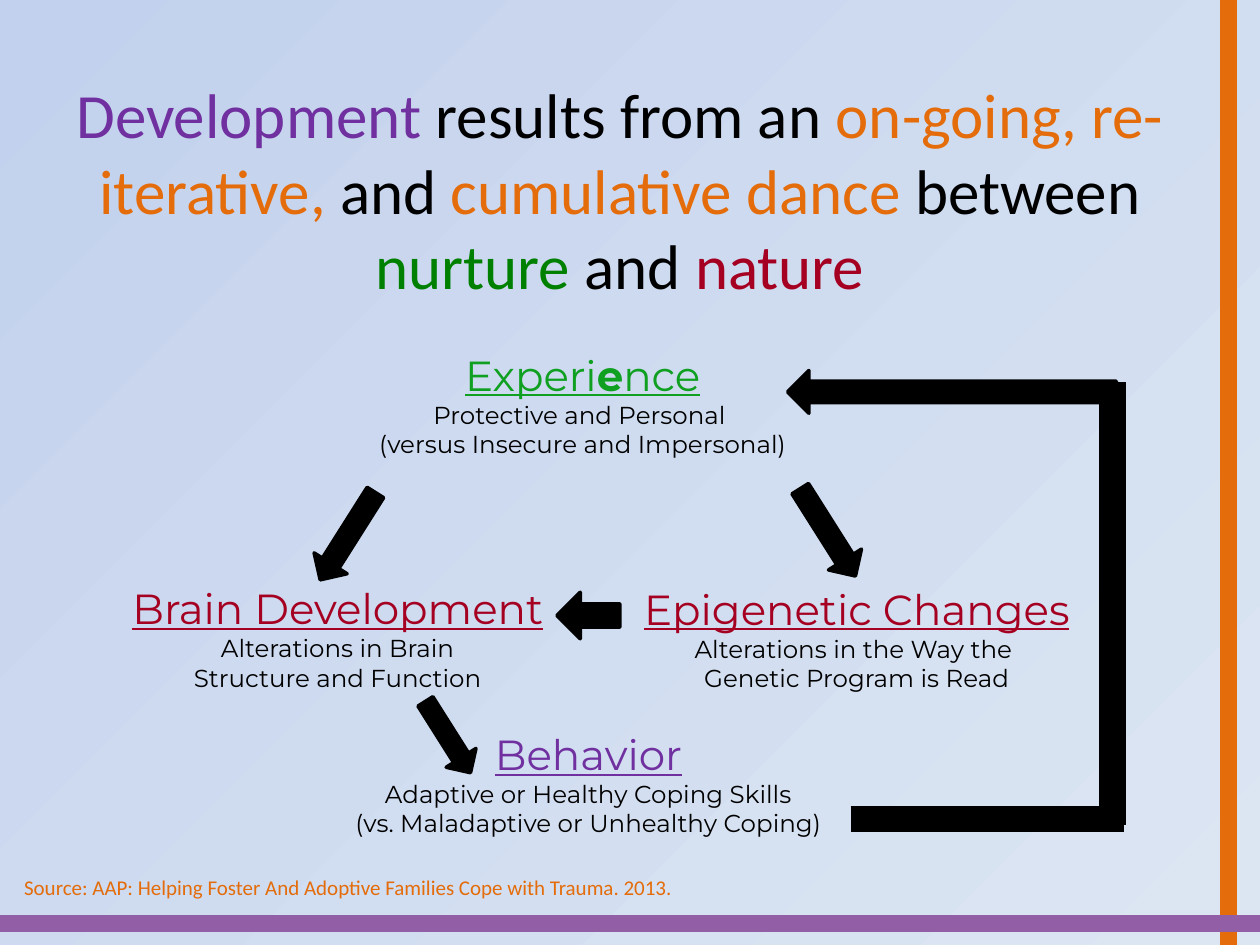
from lxml import etree
from pptx import Presentation
from pptx.dml.color import RGBColor
from pptx.enum import shapes, text
from pptx.oxml.ns import qn
from pptx.util import Inches, Pt

BLACK = RGBColor(0x00, 0x00, 0x00)
PURPLE = RGBColor(0x70, 0x30, 0xA0)
ORANGE = RGBColor(0xE4, 0x6C, 0x0A)
GREEN = RGBColor(0x00, 0x80, 0x00)
BRIGHT_GREEN = RGBColor(0x10, 0xA0, 0x21)
RED = RGBColor(0xA5, 0x00, 0x21)
VIOLET = RGBColor(0x92, 0x5F, 0xA7)
SKY = RGBColor(0xC2, 0xD1, 0xED)
PALE = RGBColor(0xDC, 0xE6, 0xF2)

MIDDLE, TOP = text.MSO_ANCHOR.MIDDLE, text.MSO_ANCHOR.TOP

TITLE = [
    ("Development ", PURPLE), ("results from an ", BLACK),
    ("on-going, re-iterative, ", ORANGE), ("and", BLACK),
    (" cumulative dance ", ORANGE), ("between ", BLACK),
    ("nurture ", GREEN), ("and ", BLACK), ("nature", RED),
]

# Place, anchor, heading colour, heading pieces (every second one bold), details
STAGES = [
    ((0.84, 4.58, 3.68, 0.96), MIDDLE, RED, ["Brain Development"],
     ["Alterations in Brain", "Structure and Function"]),
    ((2.68, 2.67, 3.89, 1.07), MIDDLE, BRIGHT_GREEN, ["Experi", "e", "nce"],
     ["Protective and Personal ", "(versus Insecure and Impersonal)"]),
    ((4.63, 4.58, 4.34, 0.96), TOP, RED, ["Epigenetic Changes"],
     ["Alterations in the Way the ", "Genetic Program is Read"]),
    ((2.3, 5.68, 4.74, 1.07), MIDDLE, PURPLE, ["Behavior"],
     ["Adaptive or Healthy Coping Skills",
      "(vs. Maladaptive or Unhealthy Coping)"]),
]

# Place and clockwise rotation
ARROWS = [
    ((6.16, 4.07, 0.82, 0.31), 57.7),   # experience to epigenetics
    ((2.35, 4.1, 0.82, 0.31), 122.3),   # experience to brain
    ((4.42, 4.7, 0.5, 0.37), 180),      # epigenetics to brain
    ((6.25, 2.94, 2.61, 0.34), 180),    # feedback to experience
    ((3.22, 5.71, 0.67, 0.28), 57.7),   # brain to behavior
]

# Start, end, colour, width
FEEDBACK_LINES = [
    ((6.75, 6.5), (8.92, 6.5), BLACK, 15),
    ((8.83, 6.55), (8.83, 3.03), BLACK, 15),
]
BORDER_LINES = [
    ((9.75, 7.5), (9.75, 0), ORANGE, 9.5),
    ((0, 7.33), (10, 7.33), VIOLET, 9.5),
]


def inches(values):
    return [Inches(value) for value in values]


def paint_background(page):
    fill = page.background.fill
    fill.gradient()
    fill.gradient_angle = 315
    for stop, color in zip(fill.gradient_stops, (SKY, PALE)):
        stop.color.rgb = color


def add_text(page, place, paragraphs, anchor=TOP, grow=True):
    """Each paragraph is a list of (wording, colour, font formats)."""
    frame = page.shapes.add_textbox(*inches(place)).text_frame
    frame.word_wrap = True
    frame.vertical_anchor = anchor
    if grow:
        frame.auto_size = text.MSO_AUTO_SIZE.SHAPE_TO_FIT_TEXT
    for index, spans in enumerate(paragraphs):
        para = frame.add_paragraph() if index else frame.paragraphs[0]
        para.alignment = text.PP_ALIGN.CENTER
        for wording, color, formats in spans:
            span = para.add_run()
            span.text = wording
            span.font.color.rgb = color
            for name, value in formats.items():
                setattr(span.font, name, value)


def add_stage(page, place, anchor, color, heading, details):
    large = {"name": "Montserrat", "size": Pt(24), "underline": True}
    small = {"name": "Montserrat", "size": Pt(14)}
    paragraphs = [[(piece, color, {**large, "bold": index % 2 == 1})
                   for index, piece in enumerate(heading)]]
    paragraphs += [[(detail, BLACK, small)] for detail in details]
    add_text(page, place, paragraphs, anchor)


def add_arrow(page, place, rotation):
    arrow = page.shapes.add_shape(shapes.MSO_SHAPE.RIGHT_ARROW, *inches(place))
    arrow.rotation = rotation
    arrow.shadow.inherit = False
    arrow.fill.solid()
    arrow.fill.fore_color.rgb = BLACK
    arrow.line.color.rgb = BLACK
    arrow.line.width = Pt(2)


def add_line(page, start, end, color, width):
    line = page.shapes.add_connector(
        shapes.MSO_CONNECTOR.STRAIGHT, *inches(start + end))
    line.line.color.rgb = color
    line.line.width = Pt(width)
    etree.SubElement(line._element.spPr, qn("a:effectLst"))


def main():
    deck = Presentation()
    deck.slide_width, deck.slide_height = Inches(10), Inches(7.5)
    page = deck.slides.add_slide(deck.slide_layouts[6])
    paint_background(page)

    # Title
    title_font = {"name": "Calibri", "size": Pt(36)}
    add_text(page, (0.42, 0.5, 9, 2),
             [[(wording, color, title_font) for wording, color in TITLE]],
             MIDDLE, grow=False)

    # Cycle of development
    for stage in STAGES:
        add_stage(page, *stage)
    for arrow in ARROWS:
        add_arrow(page, *arrow)
    for line in FEEDBACK_LINES:
        add_line(page, *line)

    # Source and border lines
    source = "Source: AAP: Helping Foster And Adoptive Families Cope with Trauma. 2013."
    add_text(page, (-0.57, 6.89, 6.67, 0.61),
             [[(source, ORANGE, {"name": "Calibri", "size": Pt(12)})]])
    for line in BORDER_LINES:
        add_line(page, *line)

    deck.save("out.pptx")


if __name__ == "__main__":
    main()
